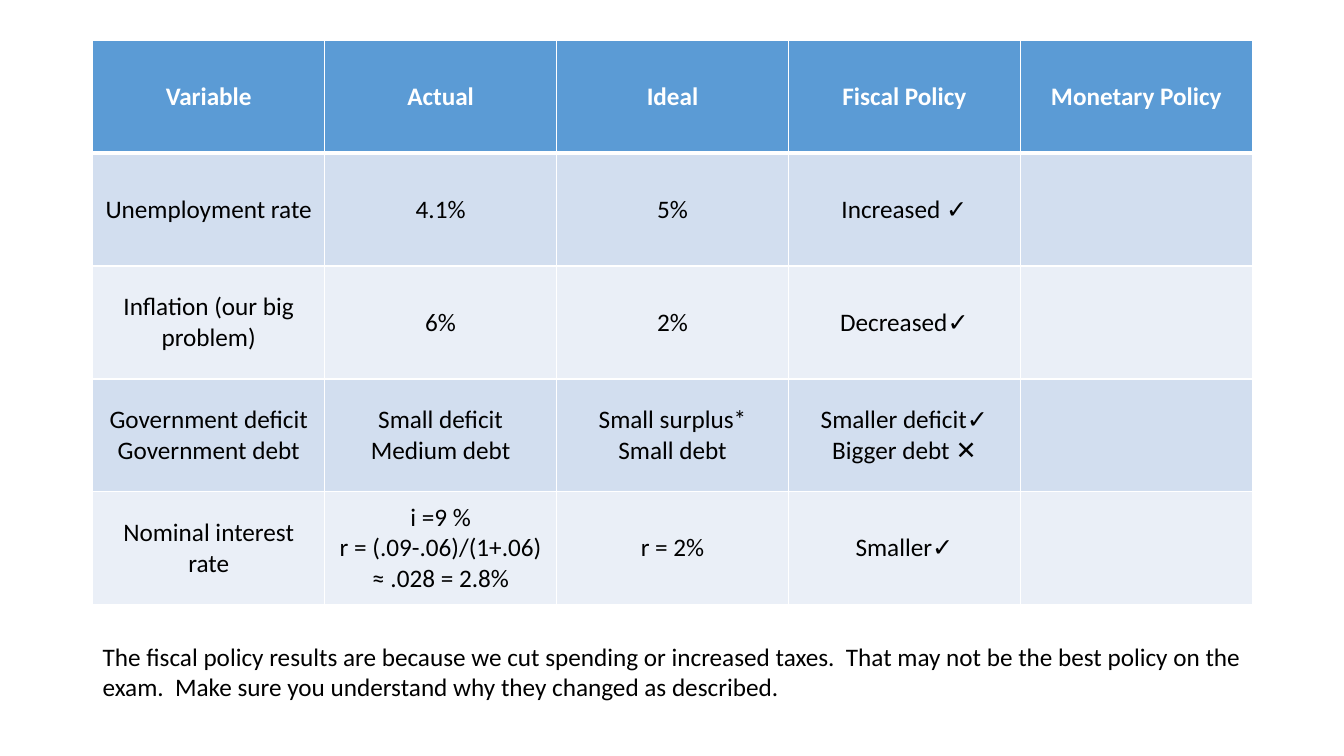
from lxml import etree
from pptx import Presentation
from pptx.dml.color import RGBColor
from pptx.enum.text import MSO_ANCHOR, MSO_AUTO_SIZE, PP_ALIGN
from pptx.oxml.ns import qn
from pptx.util import Inches, Pt

COLORS = {
    "header": "5B9BD5",
    "odd_row": "D2DEEF",
    "even_row": "EAEFF7",
    "white": "FFFFFF",
    "text": "000000",
}

POLICY_ROWS = [
    ["Variable", "Actual", "Ideal", "Fiscal Policy", "Monetary Policy"],
    ["Unemployment rate", "4.1%", "5%", "Increased ✓", ""],
    ["Inflation (our big problem)", "6%", "2%", "Decreased✓", ""],
    [
        "Government deficit Government debt",
        "Small deficit\nMedium debt",
        "Small surplus*\nSmall debt",
        "Smaller deficit✓\nBigger debt ✕",
        "",
    ],
    [
        "Nominal interest rate",
        "i =9 %\nr = (.09-.06)/(1+.06) ≈ .028 = 2.8%",
        "r = 2%",
        "Smaller✓",
        "",
    ],
]


def write_text(frame, text, color, bold=False, align=PP_ALIGN.LEFT):
    frame.text = text
    for paragraph in frame.paragraphs:
        paragraph.alignment = align
        for run in paragraph.runs:
            for attribute, value in {"name": "Calibri", "size": Pt(18), "bold": bold}.items():
                setattr(run.font, attribute, value)
            run.font.color.rgb = RGBColor.from_string(COLORS[color])


def add_borders(cell, widths):
    properties = cell._tc.get_or_add_tcPr()
    for side, width in widths.items():
        line = etree.SubElement(properties, qn(f"a:ln{side}"), w=str(Pt(width)))
        fill = etree.SubElement(line, qn("a:solidFill"))
        etree.SubElement(fill, qn("a:srgbClr"), val=COLORS["white"])


prs = Presentation()
prs.slide_width = Inches(13.33)
prs.slide_height = Inches(7.5)
slide = prs.slides.add_slide(prs.slide_layouts[6])

policy_table = slide.shapes.add_table(
    len(POLICY_ROWS), len(POLICY_ROWS[0]),
    Inches(0.92), Inches(0.4), Inches(11.5), Inches(5.6),
).table

for row_index, row in enumerate(POLICY_ROWS):
    is_header = row_index == 0
    band = "header" if is_header else "odd_row" if row_index % 2 else "even_row"
    widths = {"L": 1, "R": 1, "T": 3 if row_index == 1 else 1, "B": 3 if is_header else 1}
    for column_index, text in enumerate(row):
        cell = policy_table.cell(row_index, column_index)
        add_borders(cell, widths)
        cell.fill.solid()
        cell.fill.fore_color.rgb = RGBColor.from_string(COLORS[band])
        cell.vertical_anchor = MSO_ANCHOR.MIDDLE
        write_text(cell.text_frame, text, "white" if is_header else "text",
                   is_header, PP_ALIGN.CENTER)

exam_advice = slide.shapes.add_textbox(
    Inches(0.92), Inches(6.31), Inches(11.5), Inches(0.71)
).text_frame
exam_advice.word_wrap = True
exam_advice.auto_size = MSO_AUTO_SIZE.SHAPE_TO_FIT_TEXT
write_text(
    exam_advice,
    "The fiscal policy results are because we cut spending or increased taxes.  "
    "That may not be the best policy on the exam.  "
    "Make sure you understand why they changed as described.",
    "text",
)

prs.save("out.pptx")
